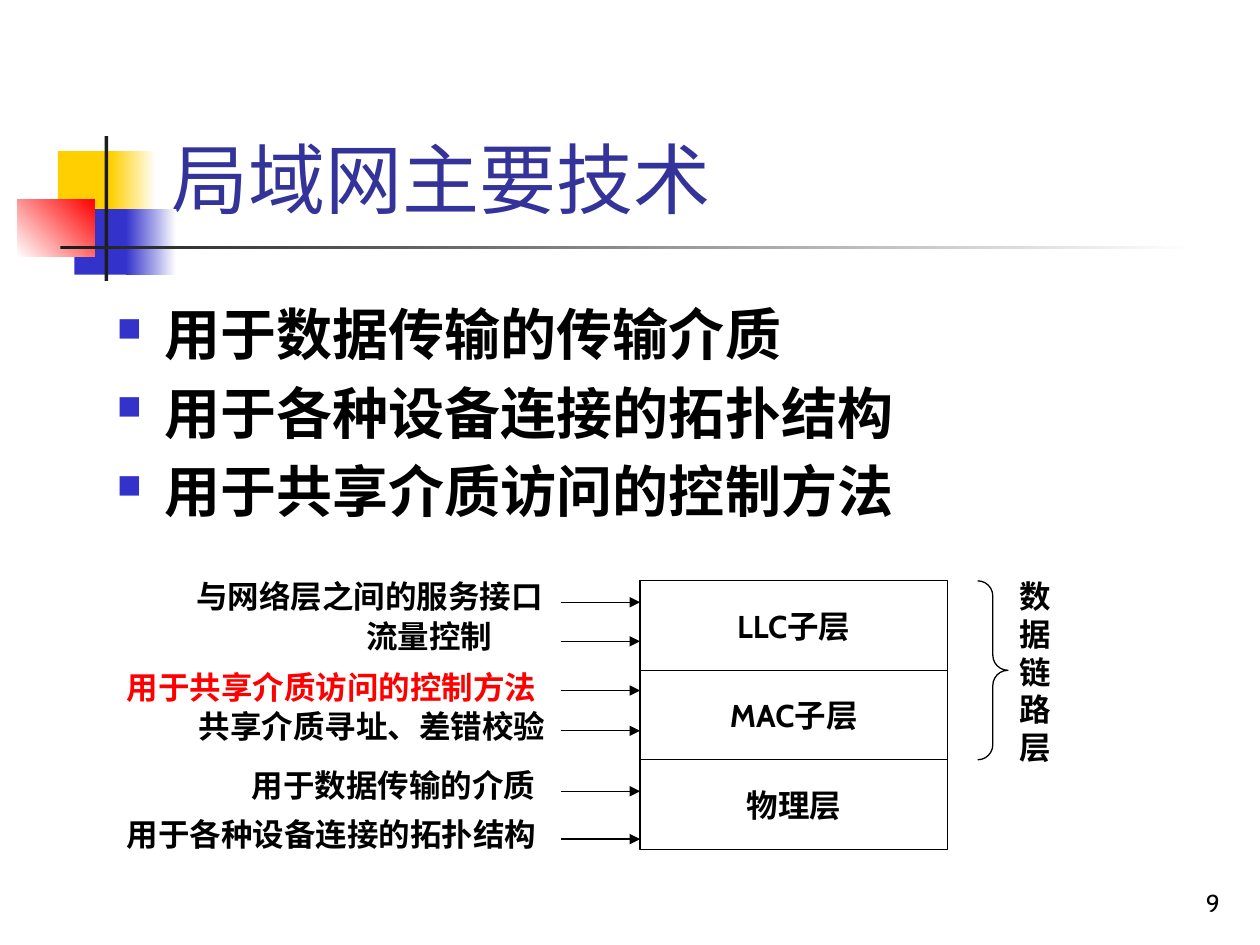
from dataclasses import dataclass

from lxml.etree import SubElement
from pptx import Presentation
from pptx.dml.color import RGBColor
from pptx.enum.shapes import MSO_CONNECTOR, MSO_SHAPE
from pptx.enum.text import MSO_ANCHOR, PP_ALIGN
from pptx.oxml.ns import qn
from pptx.util import Emu, Pt

PX = 9144


@dataclass(frozen=True)
class Theme:
    """Colours, font and type sizes of the slide."""
    font: str = "Cabin"
    ink: str = "000000"
    paper: str = "FFFFFF"
    title: str = "333399"
    accent: str = "FF0000"
    blue: str = "3333CC"
    yellow: str = "FFCF01"
    bar: str = "1C1C1C"
    title_size: int = 44
    body_size: int = 32
    label_size: int = 18
    number_size: int = 14
    line: float = 0.75


class Builder:
    """Draws themed elements on the current slide."""

    def __init__(self, slide, theme):
        """Keep the slide and its theme."""
        self.s, self.t = slide, theme

    def box(self, *px):
        """Turn px lengths into EMU."""
        return [Emu(v * PX) for v in px]

    def fill_text(self, tf, lines, size, color=None, bold=True, align=PP_ALIGN.LEFT,
                  anchor=MSO_ANCHOR.TOP, wrap=True):
        """Fill a text frame with one paragraph per line."""
        tf.word_wrap, tf.vertical_anchor = wrap, anchor
        for i, line in enumerate(lines):
            p = tf.paragraphs[0] if i == 0 else tf.add_paragraph()
            p.alignment = align
            r = p.add_run()
            r.text = line
            style = {"name": self.t.font, "size": Pt(size), "bold": bold}
            for key, value in style.items():
                setattr(r.font, key, value)
            r.font.color.rgb = RGBColor.from_string(color or self.t.ink)
            SubElement(r.font._element, qn("a:ea"), typeface=self.t.font)

    def title(self, text, *px):
        """Move and format the title placeholder."""
        sp = self.s.shapes.title
        for key, value in zip(("left", "top", "width", "height"), self.box(*px)):
            setattr(sp, key, value)
        self.fill_text(sp.text_frame, [text], self.t.title_size, self.t.title, False,
                       anchor=MSO_ANCHOR.BOTTOM)

    def text(self, lines, size, *px, **style):
        """Add a text box."""
        tf = self.s.shapes.add_textbox(*self.box(*px)).text_frame
        self.fill_text(tf, lines, size, **style)
        return tf

    def bullets(self, lines, *px):
        """Add a list with square bullets."""
        tf = self.text(lines, self.t.body_size, *px)
        for p in tf.paragraphs:
            p.space_before = Pt(self.t.body_size * 0.2)
            pPr = p._p.get_or_add_pPr()
            indent = 38 * PX
            pPr.set("marL", str(indent))
            pPr.set("indent", str(-indent))
            SubElement(SubElement(pPr, qn("a:buClr")), qn("a:srgbClr"), val=self.t.blue)
            SubElement(pPr, qn("a:buSzPct"), val="60000")
            SubElement(pPr, qn("a:buChar"), char="■")

    def block(self, colors, *px, angle=0):
        """Add a borderless rectangle, solid or with a two-colour gradient."""
        sp = self.s.shapes.add_shape(MSO_SHAPE.RECTANGLE, *self.box(*px))
        sp.shadow.inherit = False
        sp.line.fill.background()
        if len(colors) == 1:
            sp.fill.solid()
            sp.fill.fore_color.rgb = RGBColor.from_string(colors[0])
            return
        sp.fill.gradient()
        sp.fill.gradient_angle = angle
        for stop, position, color in zip(sp.fill.gradient_stops, (0, 1), colors):
            stop.position = position
            stop.color.rgb = RGBColor.from_string(color)

    def stroke(self, line):
        """Give a line the theme's colour and width."""
        line.color.rgb = RGBColor.from_string(self.t.ink)
        line.width = Pt(self.t.line)

    def layer(self, text, *px):
        """Add an outlined layer with a centred name."""
        sp = self.s.shapes.add_shape(MSO_SHAPE.RECTANGLE, *self.box(*px))
        sp.shadow.inherit = False
        sp.fill.solid()
        sp.fill.fore_color.rgb = RGBColor.from_string(self.t.paper)
        self.stroke(sp.line)
        self.fill_text(sp.text_frame, [text], self.t.label_size, align=PP_ALIGN.CENTER,
                       anchor=MSO_ANCHOR.MIDDLE, wrap=False)

    def brace(self, *px):
        """Add a right brace."""
        sp = self.s.shapes.add_shape(MSO_SHAPE.RIGHT_BRACE, *self.box(*px))
        sp.shadow.inherit = False
        sp.fill.background()
        self.stroke(sp.line)
        sp.adjustments[0] = sp.adjustments[1] = 0.5

    def arrow(self, *px):
        """Add a straight arrow."""
        c = self.s.shapes.add_connector(MSO_CONNECTOR.STRAIGHT, *self.box(*px))
        self.stroke(c.line)
        SubElement(c.line._get_or_add_ln(), qn("a:tailEnd"), type="triangle")
        SubElement(c._element.spPr, qn("a:effectLst"))


def main():
    """Build and save the slide."""
    t = Theme()
    prs = Presentation()
    prs.slide_width, prs.slide_height = Emu(1000 * PX), Emu(750 * PX)
    b = Builder(prs.slides.add_slide(prs.slide_layouts[5]), t)

    b.block([t.yellow], 46, 120, 48, 52)
    b.block([t.yellow, t.paper], 88, 120, 36, 52)
    b.block([t.blue], 59, 166, 46, 52)
    b.block([t.blue, t.paper], 100, 166, 40, 52)
    b.block([t.paper, t.accent], 14, 158, 61, 46, angle=45)
    b.block([t.bar], 83, 108, 3, 115)
    b.block([t.bar, t.paper], 48, 195, 900, 3)

    b.title("局域网主要技术", 126, 23, 852, 160)
    b.bullets(["用于数据传输的传输介质", "用于各种设备连接的拓扑结构",
               "用于共享介质访问的控制方法"], 83, 233, 850, 220)

    left, top, width, height = 508, 461, 244, 71
    for i, name in enumerate(("LLC子层", "MAC子层", "物理层")):
        b.layer(name, left, top + i * height, width, height)
    b.brace(776, top, 24, 2 * height)
    b.text(["数据链路层"], t.label_size, 799, 453, 63, 160)

    functions = [
        ("与网络层之间的服务接口", 146, 453, 300, 478, t.ink),
        ("流量控制", 281, 485, 120, 509, t.ink),
        ("用于共享介质访问的控制方法", 91, 525, 347, 548, t.accent),
        ("共享介质寻址、差错校验", 148, 556, 297, 580, t.ink),
        ("用于数据传输的介质", 190, 603, 247, 628, t.ink),
        ("用于各种设备连接的拓扑结构", 91, 642, 347, 666, t.ink),
    ]
    for name, x, y, w, arrow_y, color in functions:
        b.text([name], t.label_size, x, y, w, 40, color=color, wrap=False)
        b.arrow(445, arrow_y, left, arrow_y)

    b.text(["9"], t.number_size, 770, 683, 208, 50, bold=False,
           align=PP_ALIGN.RIGHT, anchor=MSO_ANCHOR.BOTTOM)
    prs.save("out.pptx")


if __name__ == "__main__":
    main()
